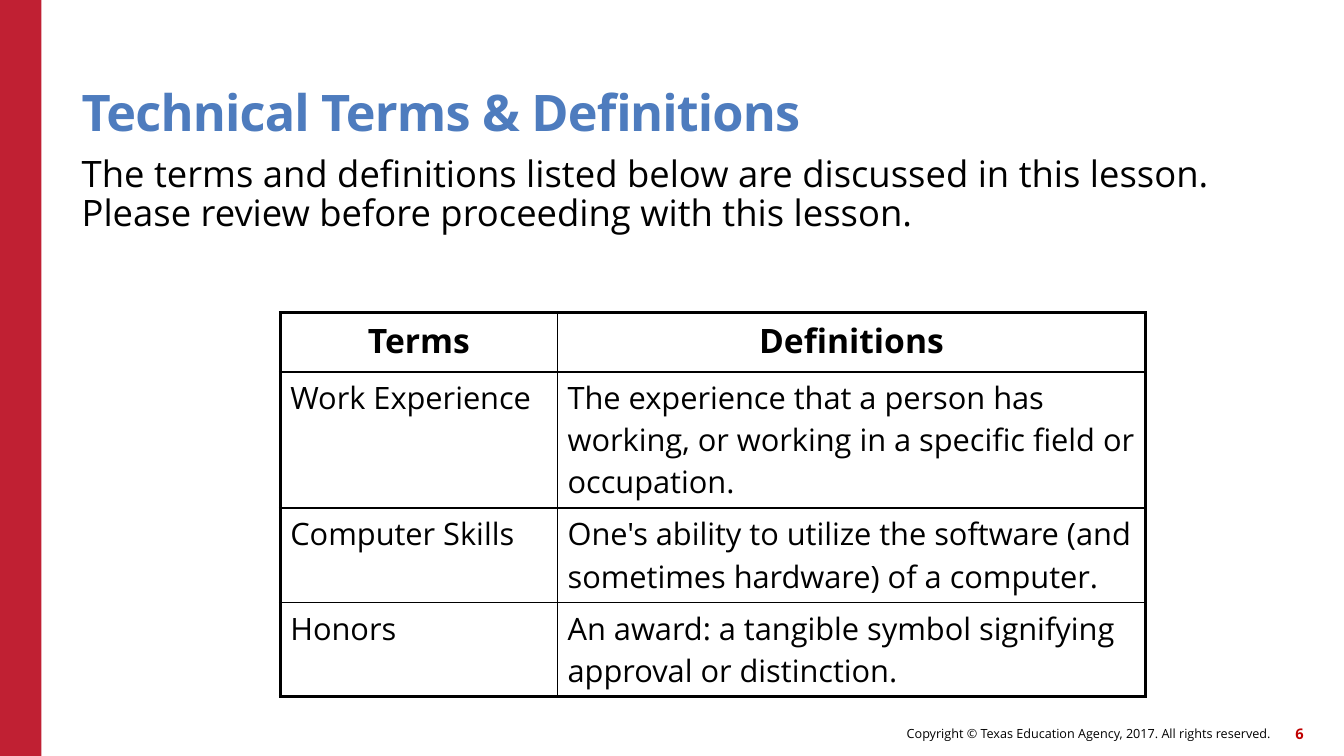
from dataclasses import dataclass

from lxml import etree
from pptx import Presentation
from pptx import util as u
from pptx.dml.color import RGBColor
from pptx.enum import shapes, text
from pptx.oxml.ns import qn


@dataclass(frozen=True)
class Theme:
    font: str = "Open Sans"
    red: str = "C02033"
    number_red: str = "C00000"
    blue: str = "4E7CBE"
    black: str = "000000"
    title: float = 36
    body: float = 26
    header: float = 24
    cell: float = 22
    footer: float = 9
    number: float = 10.5
    outer_line: float = 2.25
    inner_line: float = 1


T = Theme()
LEFT, CENTER, RIGHT = text.PP_ALIGN.LEFT, text.PP_ALIGN.CENTER, text.PP_ALIGN.RIGHT
TOP, MIDDLE, BOTTOM = text.MSO_ANCHOR.TOP, text.MSO_ANCHOR.MIDDLE, text.MSO_ANCHOR.BOTTOM

TERMS = [
    ("Terms", "Definitions"),
    ("Work Experience",
     "The experience that a person has working, or working in a specific field or occupation."),
    ("Computer Skills",
     "One's ability to utilize the software (and sometimes hardware) of a computer."),
    ("Honors",
     "An award: a tangible symbol signifying approval or distinction."),
]
COLUMN_WIDTHS = (2.75, 5.83)
ROW_HEIGHTS = (0.59, 1.35, 0.94, 0.93)


def inches(box):
    return [u.Inches(v) for v in box]


def write(p, words, size, color=T.black, bold=False, align=LEFT):
    p.alignment = align
    r = p.add_run()
    r.text = words
    r.font.name = T.font
    r.font.size = u.Pt(size)
    r.font.bold = bold
    r.font.color.rgb = RGBColor.from_string(color)
    return r


def add_text(slide, box, words, size, color=T.black, bold=False,
             align=LEFT, anchor=TOP, line_spacing=None):
    tf = slide.shapes.add_textbox(*inches(box)).text_frame
    tf.word_wrap = True
    tf.vertical_anchor = anchor
    tf.margin_left = tf.margin_top = tf.margin_right = tf.margin_bottom = 0
    p = tf.paragraphs[0]
    p.line_spacing = line_spacing
    return write(p, words, size, color, bold, align)


def add_side_band(slide, box):
    sp = slide.shapes.add_shape(shapes.MSO_SHAPE.RECTANGLE, *inches(box))
    sp.shadow.inherit = False
    sp.fill.solid()
    sp.fill.fore_color.rgb = RGBColor.from_string(T.red)
    sp.line.fill.background()


def add_heading(slide, box):
    left, top, width, height = box
    r = add_text(slide, (left, top, 11, 0.96), "Technical Terms & Definitions",
                 T.title, T.blue, True, anchor=BOTTOM, line_spacing=0.9)
    r.font._element.set("spc", "-60")
    add_text(slide, (left, top + 1.1, width, height - 1.1),
             "The terms and definitions listed below are discussed in this lesson. "
             "Please review before proceeding with this lesson.",
             T.body, line_spacing=0.9)


def set_borders(cell, outer_sides):
    """Heavy lines on the outer sides of the table, thin lines elsewhere."""
    tcPr = cell._tc.get_or_add_tcPr()
    for side in "LRTB":
        width = T.outer_line if side in outer_sides else T.inner_line
        ln = etree.SubElement(tcPr, qn(f"a:ln{side}"), w=str(u.Pt(width)))
        fill = etree.SubElement(ln, qn("a:solidFill"))
        etree.SubElement(fill, qn("a:srgbClr"), val=T.black)


def add_terms_table(slide, box):
    rows, cols = len(TERMS), len(COLUMN_WIDTHS)
    table = slide.shapes.add_table(rows, cols, *inches(box)).table
    table.horz_banding = False
    for column, width in zip(table.columns, COLUMN_WIDTHS):
        column.width = u.Inches(width)
    for i, (row, height) in enumerate(zip(table.rows, ROW_HEIGHTS)):
        row.height = u.Inches(height)
        header = i == 0
        for j, cell in enumerate(row.cells):
            edges = {"L": j == 0, "R": j == cols - 1, "T": header, "B": i == rows - 1}
            set_borders(cell, [side for side, outer in edges.items() if outer])
            cell.fill.background()
            write(cell.text_frame.paragraphs[0], TERMS[i][j],
                  T.header if header else T.cell, bold=header,
                  align=CENTER if header else LEFT)


def add_footer(slide, box):
    left, top, width, height = box
    number_width = 0.42
    add_text(slide, (left, top, 6.46, height),
             "Copyright © Texas Education Agency, 2017. All rights reserved.",
             T.footer, align=RIGHT, anchor=MIDDLE)
    add_text(slide, (left + width - number_width, top, number_width, height),
             "6", T.number, T.number_red, True, RIGHT, MIDDLE)


def main():
    prs = Presentation()
    prs.slide_width, prs.slide_height = u.Inches(13.33), u.Inches(7.5)
    slide = prs.slides.add_slide(prs.slide_layouts[6])
    add_side_band(slide, (0, 0, 0.41, 7.5))
    add_footer(slide, (6.14, 7.12, 6.79, 0.32))
    add_heading(slide, (0.81, 0.45, 12.09, 2.58))
    add_terms_table(slide, (2.78, 3.1, sum(COLUMN_WIDTHS), sum(ROW_HEIGHTS)))
    prs.save("out.pptx")


if __name__ == "__main__":
    main()
